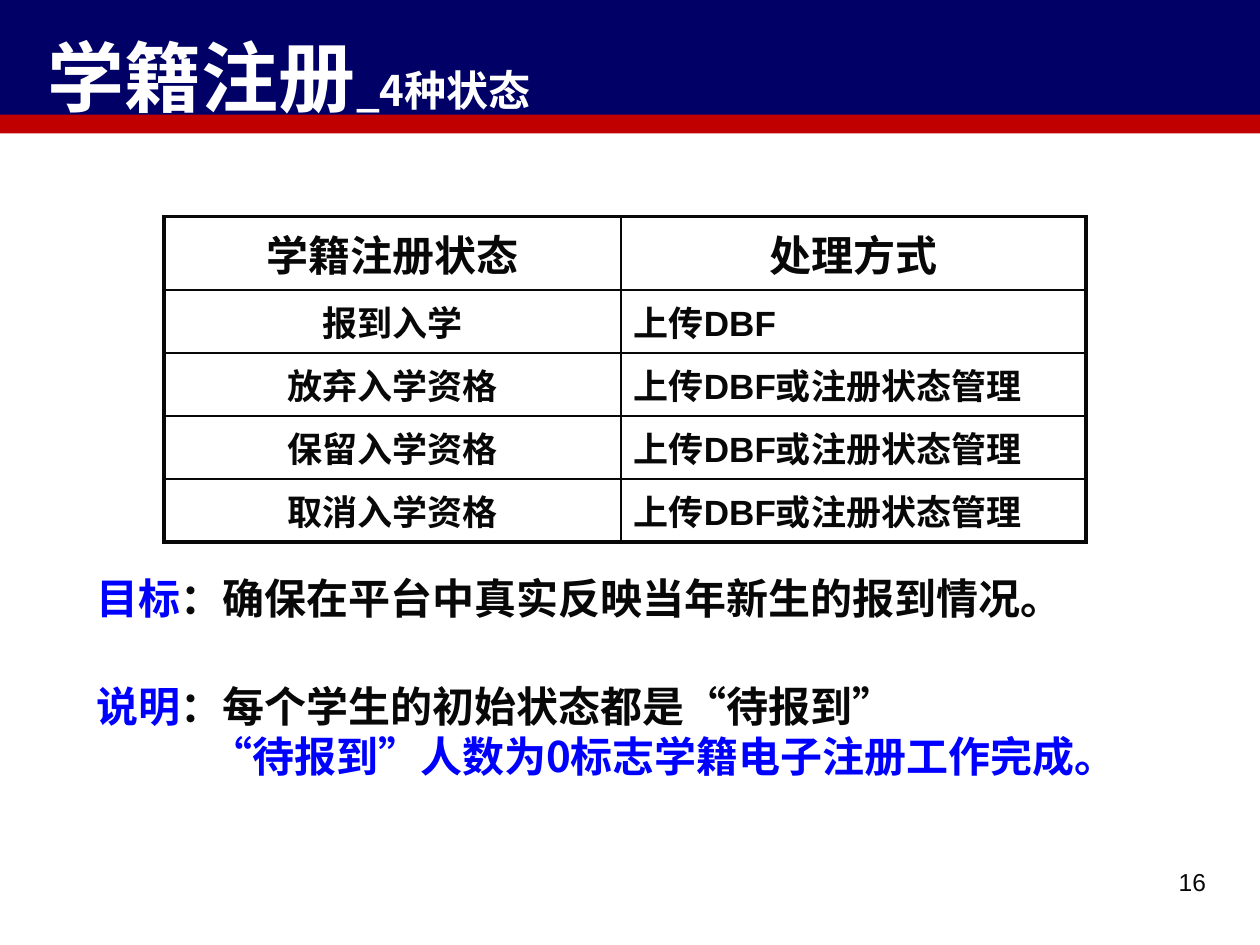
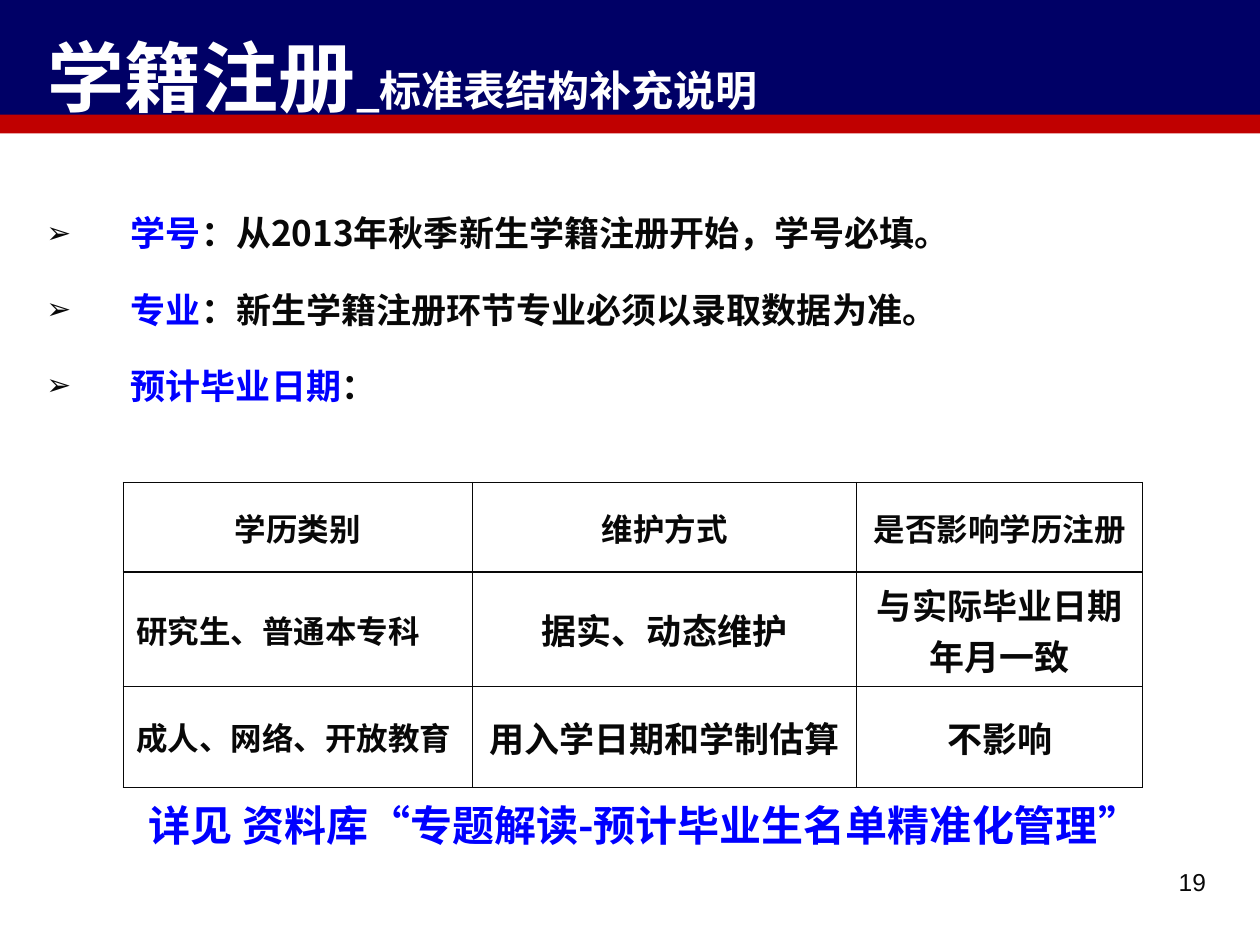
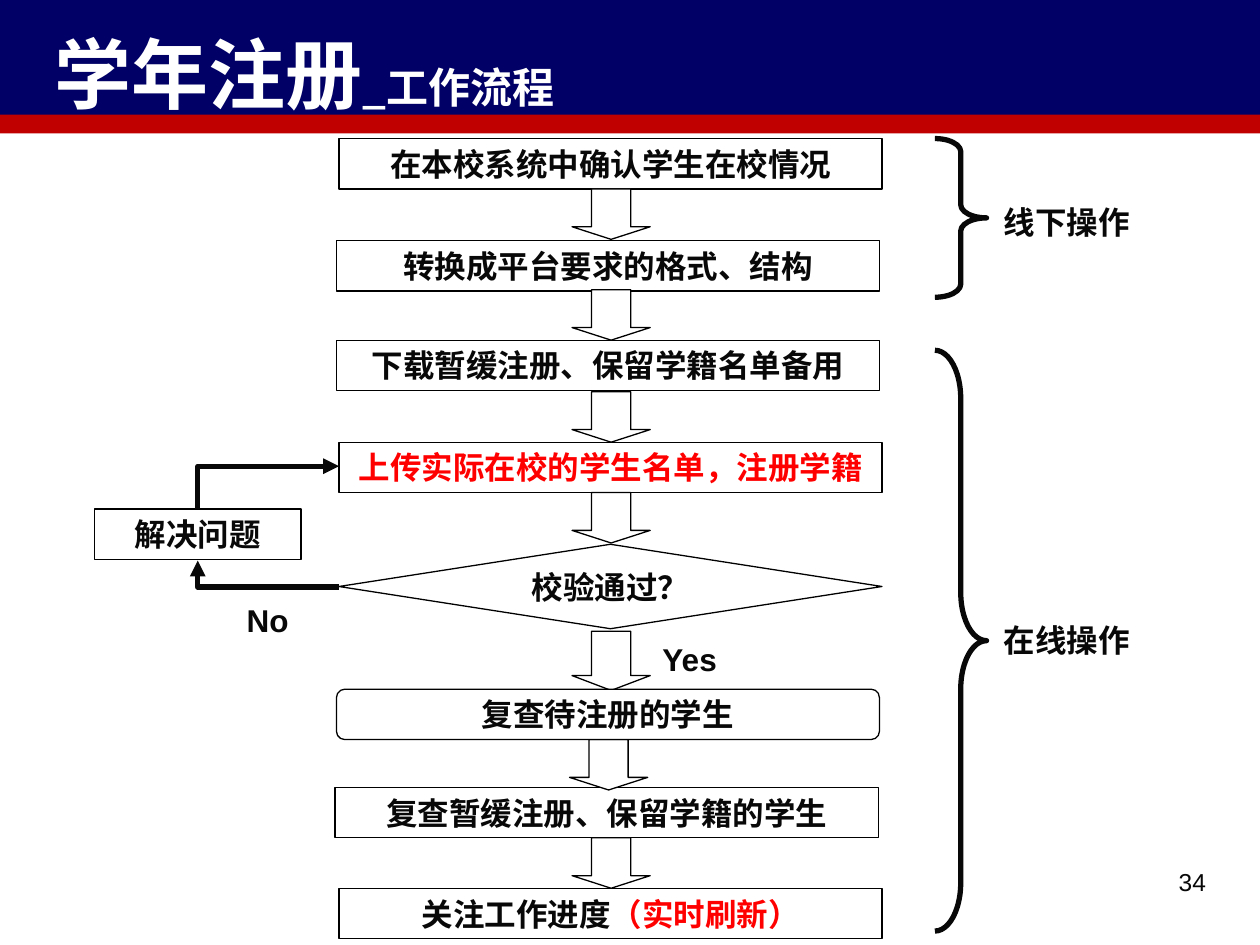
import pptx
import pptx.util
import pptx.dml.color
import pptx.enum.shapes
import pptx.enum.text
import pptx.oxml
import pptx.oxml.ns
import lxml.etree

Inches = pptx.util.Inches
Pt = pptx.util.Pt
RGB = pptx.dml.color.RGBColor.from_string
SHAPE = pptx.enum.shapes.MSO_SHAPE
ALIGN = pptx.enum.text.PP_ALIGN
ANCHOR = pptx.enum.text.MSO_ANCHOR
qn = pptx.oxml.ns.qn

COLORS = {
    "navy": "000066",
    "crimson": "C00000",
    "white": "FFFFFF",
    "ink": "080808",
    "outline": "000000",
    "blue": "0000FF",
    "red": "FF0000",
}
CJK = "Noto Sans CJK SC"


def add_run(paragraph, text, size, color="ink", font=CJK, bold=True):
    run = paragraph.add_run()
    run.text = text
    run.font.size = Pt(size)
    run.font.bold = bold
    run.font.name = font
    run.font.color.rgb = RGB(COLORS[color])
    east_asian = lxml.etree.SubElement(run.font._element, qn("a:ea"))
    east_asian.set("typeface", CJK)


def add_text_box(slide, left, top, width, height, anchor=ANCHOR.MIDDLE):
    frame = slide.shapes.add_textbox(
        Inches(left), Inches(top), Inches(width), Inches(height)
    ).text_frame
    frame.word_wrap = True
    frame.vertical_anchor = anchor
    return frame


prs = pptx.Presentation()
prs.slide_width = Inches(10)
prs.slide_height = Inches(7.5)
title_only = prs.slide_layouts[5]

headings = [
    ("学籍注册", "_4种状态", "16", 0.28, 0.21, 0.63),
    ("学籍注册", "_标准表结构补充说明", "19", 0.28, 0.21, 0.63),
    ("学年注册", "_工作流程", "34", 0.33, 0.17, 0.67),
]
slides = []
for topic, subtopic, number, left, top, height in headings:
    slide = prs.slides.add_slide(title_only)
    slides.append(slide)
    title = slide.shapes.title
    title.left, title.top = Inches(left), Inches(top)
    title.width, title.height = Inches(8.5), Inches(height)
    title.text_frame.auto_size = pptx.enum.text.MSO_AUTO_SIZE.NONE
    title.text_frame.vertical_anchor = ANCHOR.MIDDLE
    heading = title.text_frame.paragraphs[0]
    heading.alignment = ALIGN.LEFT
    heading.line_spacing = 1.2
    add_run(heading, topic, 44, "white")
    add_run(heading, subtopic, 24, "white")

    page_number = add_text_box(slide, 7.17, 6.83, 2.5, 0.52, ANCHOR.TOP).paragraphs[0]
    page_number.alignment = ALIGN.RIGHT
    add_run(page_number, number, 14, font="Arial", bold=False)

status_slide, structure_slide, workflow_slide = slides

for top, height, color in [(0, 0.91, "navy"), (0.79, 0.27, "crimson")]:
    band = status_slide.shapes.add_shape(
        SHAPE.RECTANGLE, 0, Inches(top), Inches(10), Inches(height)
    )
    band.shadow.inherit = False
    band.fill.solid()
    band.fill.fore_color.rgb = RGB(COLORS[color])
    band.line.fill.background()
    title_only.shapes.element.insert(2, band.element)

tables = [
    (
        status_slide, 1.3, 1.72, [3.63, 3.69], [0.58] + [0.5] * 4,
        "Arial", ANCHOR.TOP, 2.25,
        [
            [("学籍注册状态", 24, "c"), ("处理方式", 24, "c")],
            [("报到入学", 20, "c"), ("上传DBF", 20, "l")],
            [("放弃入学资格", 20, "c"), ("上传DBF或注册状态管理", 20, "l")],
            [("保留入学资格", 20, "c"), ("上传DBF或注册状态管理", 20, "l")],
            [("取消入学资格", 20, "c"), ("上传DBF或注册状态管理", 20, "l")],
        ],
    ),
    (
        structure_slide, 0.98, 3.83, [2.77, 3.05, 2.27], [0.71, 0.91, 0.8],
        CJK, ANCHOR.MIDDLE, 1,
        [
            [("学历类别", 18, "c"), ("维护方式", 18, "c"), ("是否影响学历注册", 18, "c")],
            [("研究生、普通本专科", 18, "l"), ("据实、动态维护", 20, "c"),
             ("与实际毕业日期\n年月一致", 20, "c")],
            [("成人、网络、开放教育", 18, "l"), ("用入学日期和学制估算", 20, "c"),
             ("不影响", 20, "c")],
        ],
    ),
]
for slide, left, top, widths, heights, font, anchor, edge, rows in tables:
    table = slide.shapes.add_table(
        len(heights), len(widths), Inches(left), Inches(top),
        Inches(sum(widths)), Inches(sum(heights)),
    ).table
    table.first_row = table.horz_banding = False
    for column, width in zip(table.columns, widths):
        column.width = Inches(width)
    for r, (height, cells) in enumerate(zip(heights, rows)):
        table.rows[r].height = Inches(height)
        for c, (text, size, align) in enumerate(cells):
            cell = table.cell(r, c)
            cell.vertical_anchor = anchor
            on_edge = {
                "lnL": c == 0,
                "lnR": c == len(widths) - 1,
                "lnT": r == 0,
                "lnB": r == len(heights) - 1,
            }
            for side, outer in on_edge.items():
                border = lxml.etree.SubElement(
                    cell._tc.get_or_add_tcPr(), qn("a:" + side),
                    w=str(Pt(edge if outer else 1)),
                )
                fill = lxml.etree.SubElement(border, qn("a:solidFill"))
                lxml.etree.SubElement(fill, qn("a:srgbClr"), val=COLORS["ink"])
            cell.fill.background()
            for i, line in enumerate(text.split("\n")):
                frame = cell.text_frame
                paragraph = frame.add_paragraph() if i else frame.paragraphs[0]
                paragraph.alignment = ALIGN.CENTER if align == "c" else ALIGN.LEFT
                add_run(paragraph, line, size, font=font)

goal = add_text_box(status_slide, 0.67, 4.54, 8.74, 2.36, ANCHOR.TOP)
goal_lines = [
    (0, 0.67, -0.67, [("目标", "blue"), ("：确保在平台中真实反映当年新生的报到情况。", "ink")]),
    (36, 0.67, -0.67, [("说明", "blue"), ("：每个学生的初始状态都是“待报到”", "ink")]),
    (2.4, 0.9, 0, [("“待报到”人数为0标志学籍电子注册工作完成。", "blue")]),
]
for i, (space, margin, indent, runs) in enumerate(goal_lines):
    paragraph = goal.add_paragraph() if i else goal.paragraphs[0]
    paragraph.line_spacing = 0.9
    paragraph.space_before = Pt(space)
    properties = paragraph._p.get_or_add_pPr()
    properties.set("marL", str(Inches(margin)))
    properties.set("indent", str(Inches(indent)))
    for text, color in runs:
        add_run(paragraph, text, 24, color)

field_notes = add_text_box(structure_slide, 0.27, 1.4, 9.41, 2.28, ANCHOR.TOP)
notes = [
    ("学号", "：从2013年秋季新生学籍注册开始，学号必填。"),
    ("专业", "：新生学籍注册环节专业必须以录取数据为准。"),
    ("预计毕业日期", "："),
]
for i, (field, note) in enumerate(notes):
    paragraph = field_notes.add_paragraph() if i else field_notes.paragraphs[0]
    paragraph.line_spacing = 1.7
    paragraph.space_before = Pt(2.8 if i else 0)
    properties = paragraph._p.get_or_add_pPr()
    properties.set("marL", str(Inches(0.67)))
    properties.set("indent", str(Inches(-0.67)))
    bullet_color = lxml.etree.SubElement(properties, qn("a:buClr"))
    lxml.etree.SubElement(bullet_color, qn("a:srgbClr"), val=COLORS["ink"])
    lxml.etree.SubElement(properties, qn("a:buSzPct"), val="85000")
    lxml.etree.SubElement(properties, qn("a:buFont"), typeface="Arial")
    lxml.etree.SubElement(properties, qn("a:buChar"), char="➢")
    add_run(paragraph, field, 20, "blue")
    add_run(paragraph, note, 20)

reference = add_text_box(structure_slide, 0.9, 6.27, 8.43, 0.55).paragraphs[0]
reference.alignment = ALIGN.CENTER
add_run(reference, "详见 资料库“专题解读-预计毕业生名单精准化管理”", 24, "blue")

process = SHAPE.FLOWCHART_PROCESS
step_width, step_height = 4.31, 0.4
arrow = SHAPE.DOWN_ARROW
flow = [
    (process, 2.69, 1.1, step_width, step_height, CJK, [("在本校系统中确认学生在校情况", "ink")]),
    (process, 2.67, 1.91, step_width, step_height, CJK, [("转换成平台要求的格式、结构", "ink")]),
    (process, 2.67, 2.7, step_width, step_height, "Courier New",
     [("下载暂缓注册、保留学籍名单备用", "ink")]),
    (process, 2.69, 3.51, step_width, step_height, CJK,
     [("上传实际在校的学生名单，注册学籍", "red")]),
    (SHAPE.FLOWCHART_DECISION, 2.69, 4.32, step_width, 0.67, CJK, [("校验通过？", "ink")]),
    (process, 0.75, 4.04, 1.64, step_height, CJK, [("解决问题", "ink")]),
    (process, 2.66, 6.25, step_width, step_height, "Courier New",
     [("复查暂缓注册、保留学籍的学生", "ink")]),
    (process, 2.69, 7.05, step_width, step_height, "Courier New",
     [("关注工作进度", "ink"), ("（实时刷新）", "red")]),
    (arrow, 4.54, 1.5, 0.62, 0.4, CJK, []),
    (arrow, 4.54, 2.3, 0.62, 0.4, CJK, []),
    (arrow, 4.54, 3.11, 0.62, 0.4, CJK, []),
    (arrow, 4.54, 3.91, 0.62, 0.4, CJK, []),
    (arrow, 4.54, 5.01, 0.62, 0.47, CJK, []),
    (arrow, 4.52, 5.87, 0.62, 0.4, CJK, []),
    (arrow, 4.54, 6.65, 0.62, 0.4, CJK, []),
    (SHAPE.FLOWCHART_ALTERNATE_PROCESS, 2.67, 5.47, step_width, step_height, CJK,
     [("复查待注册的学生", "ink")]),
]
for kind, left, top, width, height, font, runs in flow:
    step = workflow_slide.shapes.add_shape(
        kind, Inches(left), Inches(top), Inches(width), Inches(height)
    )
    step.shadow.inherit = False
    step.fill.solid()
    step.fill.fore_color.rgb = RGB(COLORS["white"])
    step.line.color.rgb = RGB(COLORS["outline"])
    step.line.width = Pt(0.75)
    if kind == arrow:
        step.adjustments[0] = 0.5
        step.adjustments[1] = 0.25
    step.text_frame.vertical_anchor = ANCHOR.MIDDLE
    paragraph = step.text_frame.paragraphs[0]
    paragraph.alignment = ALIGN.CENTER
    for text, color in runs:
        add_run(paragraph, text, 18, color, font)

retry_paths = [
    (2.69, 4.66, 1.57, 4.45, 0),
    (1.96, 3.31, 2.3, 4.43, 270),
]
for start_x, start_y, end_x, end_y, rotation in retry_paths:
    retry = workflow_slide.shapes.add_connector(
        pptx.enum.shapes.MSO_CONNECTOR.ELBOW,
        Inches(start_x), Inches(start_y), Inches(end_x), Inches(end_y),
    )
    retry.line.color.rgb = RGB(COLORS["ink"])
    retry.line.width = Pt(3)
    properties = retry.element.spPr
    properties.find(qn("a:prstGeom")).set("prst", "bentConnector2")
    if rotation:
        properties.find(qn("a:xfrm")).set("rot", str(rotation * 60000))
    lxml.etree.SubElement(properties.find(qn("a:ln")), qn("a:tailEnd"), type="triangle")
    lxml.etree.SubElement(properties, qn("a:effectLst"))

for top, height, curve in [(1.1, 1.26, 0.254), (2.78, 4.61, 0.935)]:
    brace = workflow_slide.shapes.add_shape(
        SHAPE.RIGHT_BRACE, Inches(7.42), Inches(top), Inches(0.41), Inches(height)
    )
    brace.shadow.inherit = False
    brace.adjustments[0] = curve
    brace.adjustments[1] = 0.5
    brace.fill.background()
    brace.line.color.rgb = RGB(COLORS["ink"])
    brace.line.width = Pt(3)

flow_labels = [
    ("Yes", 5.16, 5.03, 0.86, "Arial"),
    ("No", 1.86, 4.72, 0.62, "Arial"),
    ("线下操作", 7.87, 1.56, 1.26, CJK),
    ("在线操作", 7.87, 4.88, 1.26, CJK),
]
for text, left, top, width, font in flow_labels:
    label = add_text_box(workflow_slide, left, top, width, 0.4).paragraphs[0]
    label.alignment = ALIGN.JUSTIFY
    add_run(label, text, 18, font=font)

prs.save("out.pptx")
